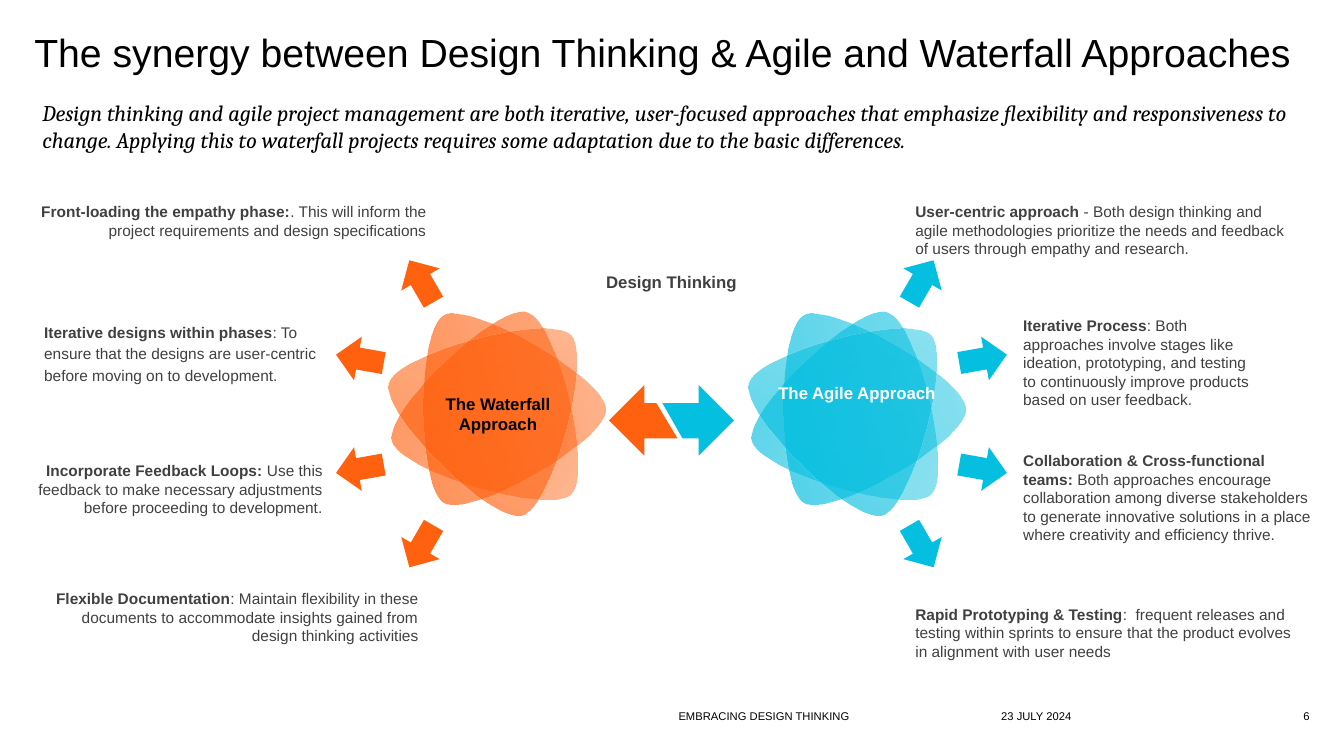
from lxml import etree
from pptx import Presentation
from pptx import util as u
from pptx.dml.color import RGBColor
from pptx.enum import shapes, text
from pptx.oxml.ns import qn

COLORS = {"orange": "FF610F", "blue": "05BFE0", "black": "000000",
          "white": "FFFFFF", "grey": "404040"}
ALIGN = {"l": text.PP_ALIGN.LEFT, "c": text.PP_ALIGN.CENTER, "r": text.PP_ALIGN.RIGHT}

# Petal outline inside its own frame: start point, then cubic curves
PETAL_W, PETAL_H = 1.9, 1.8
PETAL_START = (0.95, 0)
PETAL_CURVES = [
    ((1.26, 0), (2.04, 1.34), (1.88, 1.6)),
    ((1.73, 1.87), (0.17, 1.87), (0.02, 1.6)),
    ((-0.14, 1.34), (0.64, 0), PETAL_START),
]
PETAL_ANGLES = (256.5, 210, 165)

# Arrows on the left side: distance from the box's outer edge, from its top, rotation
ARROWS = [(0.61, 0, 330), (0, 0.77, 280), (0.61, 2.63, 210), (0, 1.86, 260)]
ARROW_W, ARROW_H = 0.44, 0.48

LEFT_NOTES = [
    ((0.19, 1.96, 4.14, 0.47), "r", 1, "Front-loading the empathy phase:",
     ". This will inform the project requirements and design specifications"),
    ((0.34, 3.13, 2.96, 0.72), "l", 1.15, "Iterative designs within phases",
     ": To ensure that the designs are user-centric before moving on to development."),
    ((0.19, 4.53, 3.11, 0.66), "r", 1, "Incorporate Feedback Loops:",
     " Use this feedback to make necessary adjustments before proceeding to development."),
    ((0.34, 5.8, 3.91, 0.66), "r", 1, "Flexible Documentation",
     ": Maintain flexibility in these documents to accommodate insights gained from "
     "design thinking activities"),
]
RIGHT_NOTES = [
    ((8.98, 1.96, 3.98, 0.66), "l", 1, "User-centric approach ",
     "- Both design thinking and agile methodologies prioritize the needs and feedback "
     "of users through empathy and research."),
    ((10.05, 3.09, 2.44, 1.03), "l", 1, "Iterative Process",
     ": Both approaches involve stages like ideation, prototyping, and testing to "
     "continuously improve products based on user feedback."),
    ((10.05, 4.43, 3.09, 1.03), "l", 1, "Collaboration & Cross-functional teams: ",
     "Both approaches encourage collaboration among diverse stakeholders to generate "
     "innovative solutions in a place where creativity and efficiency thrive."),
    ((8.98, 5.95, 4.01, 0.66), "l", 1, "Rapid Prototyping & Testing",
     ":  frequent releases and testing within sprints to ensure that the product evolves "
     "in alignment with user needs"),
]


def rgb(name):
    return RGBColor.from_string(COLORS[name])


def apply(obj, formats):
    for name, value in formats.items():
        setattr(obj, name, value)


def place(sp, box):
    apply(sp, dict(zip(("left", "top", "width", "height"), map(u.Inches, box))))


def write(tf, runs, size, color="black", align="l", anchor="TOP", inset=None,
          spacing=1, font="Arial", italic=False):
    """Fill a text frame with one paragraph of (text, bold) runs."""
    apply(tf, {"word_wrap": True, "auto_size": text.MSO_AUTO_SIZE.NONE,
               "vertical_anchor": text.MSO_ANCHOR[anchor]})
    if inset is not None:
        sides = ("left", "top", "right", "bottom")
        apply(tf, {f"margin_{side}": u.Inches(inset) for side in sides})
    p = tf.paragraphs[0]
    apply(p, {"alignment": ALIGN[align], "line_spacing": spacing, "space_before": u.Pt(0)})
    for words, bold in runs:
        r = p.add_run()
        r.text = words
        apply(r.font, {"name": font, "size": u.Pt(size), "bold": bold, "italic": italic})
        r.font.color.rgb = rgb(color)


def add_text(s, box, runs, size, **formats):
    sp = s.shapes.add_textbox(*map(u.Inches, box))
    write(sp.text_frame, runs, size, **formats)


def paint(sp, color):
    sp.shadow.inherit = False
    sp.line.fill.background()
    sp.fill.solid()
    sp.fill.fore_color.rgb = rgb(color)


def outline(s, points):
    """Closed freeform through points given in inches."""
    start, *rest = [(u.Inches(x), u.Inches(y)) for x, y in points]
    builder = s.shapes.build_freeform(*start)
    builder.add_line_segments(rest, close=True)
    return builder.convert_to_shape()


def add_petal(s, left, top):
    """Freeform the size of the petal frame, its path bent into curves."""
    right, bottom = left + PETAL_W, top + PETAL_H
    sp = outline(s, [(left, top), (right, top), (right, bottom), (left, bottom)])
    path = next(sp._element.iter(qn("a:path")))
    for step in list(path):
        path.remove(step)
    for tag, points in [("a:moveTo", [PETAL_START]),
                        *(("a:cubicBezTo", curve) for curve in PETAL_CURVES)]:
        step = etree.SubElement(path, qn(tag))
        for x, y in points:
            etree.SubElement(step, qn("a:pt"), x=str(u.Inches(x)), y=str(u.Inches(y)))
    etree.SubElement(path, qn("a:close"))
    return sp


def add_header(s, box):
    left, top, width, height = box
    title, intro = s.shapes.title, s.placeholders[1]
    place(title, (left, top, width, 0.42))
    write(title.text_frame,
          [("The synergy between Design Thinking & Agile and Waterfall Approaches", False)],
          28, anchor="MIDDLE", inset=0, spacing=0.9)
    place(intro, (left + 0.08, top + 0.65, width - 0.17, height - 0.65))
    pPr = intro.text_frame.paragraphs[0]._p.get_or_add_pPr()
    for name in ("marL", "indent"):
        pPr.set(name, "0")
    etree.SubElement(pPr, qn("a:buNone"))
    write(intro.text_frame,
          [("Design thinking and agile project management are both iterative, user-focused "
            "approaches that emphasize flexibility and responsiveness to change. Applying this "
            "to waterfall projects requires some adaptation due to the basic differences.", False)],
          16, inset=0, font="Cambria", italic=True)


def add_footer(s, box):
    left, top, width, height = box
    for dx, w, words, align in [(0, 3.06, "EMBRACING DESIGN THINKING", "l"),
                                (3.2, 1.99, "23 JULY 2024", "l"),
                                (width - 0.45, 0.45, "6", "r")]:
        add_text(s, (left + dx, top, w, height), [(words, False)], 8,
                 align=align, anchor="BOTTOM", inset=0)


def add_flower(s, box, color):
    """Three translucent petals, each turned and shifted a little."""
    left, top, width, height = box
    for i, angle in enumerate(PETAL_ANGLES):
        sp = add_petal(s, left + i * (width - PETAL_W) / 2, top + i * (height - PETAL_H) / 2)
        sp.rotation = angle
        sp.shadow.inherit = False
        sp.line.fill.background()
        sp.fill.gradient()
        sp.fill.gradient_angle = 225
        for stop in sp.fill.gradient_stops:
            stop.color.rgb = rgb(color)
        for clr, opacity in zip(sp._element.spPr.iter(qn("a:srgbClr")), (70, 46)):
            etree.SubElement(clr, qn("a:alpha")).set("val", str(opacity * 1000))


def add_arrows(s, box, color, mirrored):
    left, top, width, height = box
    for dx, dy, angle in ARROWS:
        x = left + (width - dx - ARROW_W if mirrored else dx)
        sp = s.shapes.add_shape(shapes.MSO_SHAPE.UP_ARROW,
                                *map(u.Inches, (x, top + dy, ARROW_W, ARROW_H)))
        sp.rotation = 360 - angle if mirrored else angle
        paint(sp, color)


def add_bridge(s, box):
    """Two-headed arrow in two colours, split by a slanted gap."""
    left, top, width, height = box
    mid, right = top + height / 2, left + width
    upper, lower, bottom = top + 0.18, top + 0.53, top + height
    halves = {
        "blue": [(right - 0.35, top), (right, mid), (right - 0.35, bottom),
                 (right - 0.35, lower), (right - 0.51, lower), (right - 0.71, upper),
                 (right - 0.35, upper)],
        "orange": [(left + 0.35, top), (left + 0.35, upper), (left + 0.47, upper),
                   (left + 0.68, lower), (left + 0.35, lower), (left + 0.35, bottom),
                   (left, mid)],
    }
    for color, points in halves.items():
        paint(outline(s, points), color)


def add_notes_column(s, notes):
    for box, align, spacing, heading, body in notes:
        add_text(s, box, [(heading, True), (body, False)], 11,
                 color="grey", align=align, spacing=spacing)


def main():
    prs = Presentation()
    prs.slide_width, prs.slide_height = u.Inches(13.33), u.Inches(7.5)
    s = prs.slides.add_slide(prs.slide_layouts[1])
    add_header(s, (0.34, 0.33, 12.64, 1.34))
    add_footer(s, (6.73, 6.95, 6.26, 0.22))
    # Flowers, bridge and arrows
    add_flower(s, (3.81, 3.26, 2.08, 1.88), "orange")
    add_flower(s, (7.38, 3.26, 2.08, 1.88), "blue")
    add_bridge(s, (6.04, 3.82, 1.24, 0.7))
    add_arrows(s, (3.35, 2.55, 1.05, 3.11), "orange", False)
    add_arrows(s, (8.92, 2.55, 1.05, 3.11), "blue", True)
    # Labels and notes
    for x, y, words, color in [(4.06, 3.86, "The Waterfall Approach", "black"),
                               (7.62, 3.75, "The Agile Approach", "white"),
                               (5.78, 2.65, "Design Thinking", "grey")]:
        add_text(s, (x, y, 1.76, 0.5), [(words, True)], 12, color=color, align="c")
    add_notes_column(s, LEFT_NOTES)
    add_notes_column(s, RIGHT_NOTES)
    prs.save("out.pptx")


if __name__ == "__main__":
    main()
